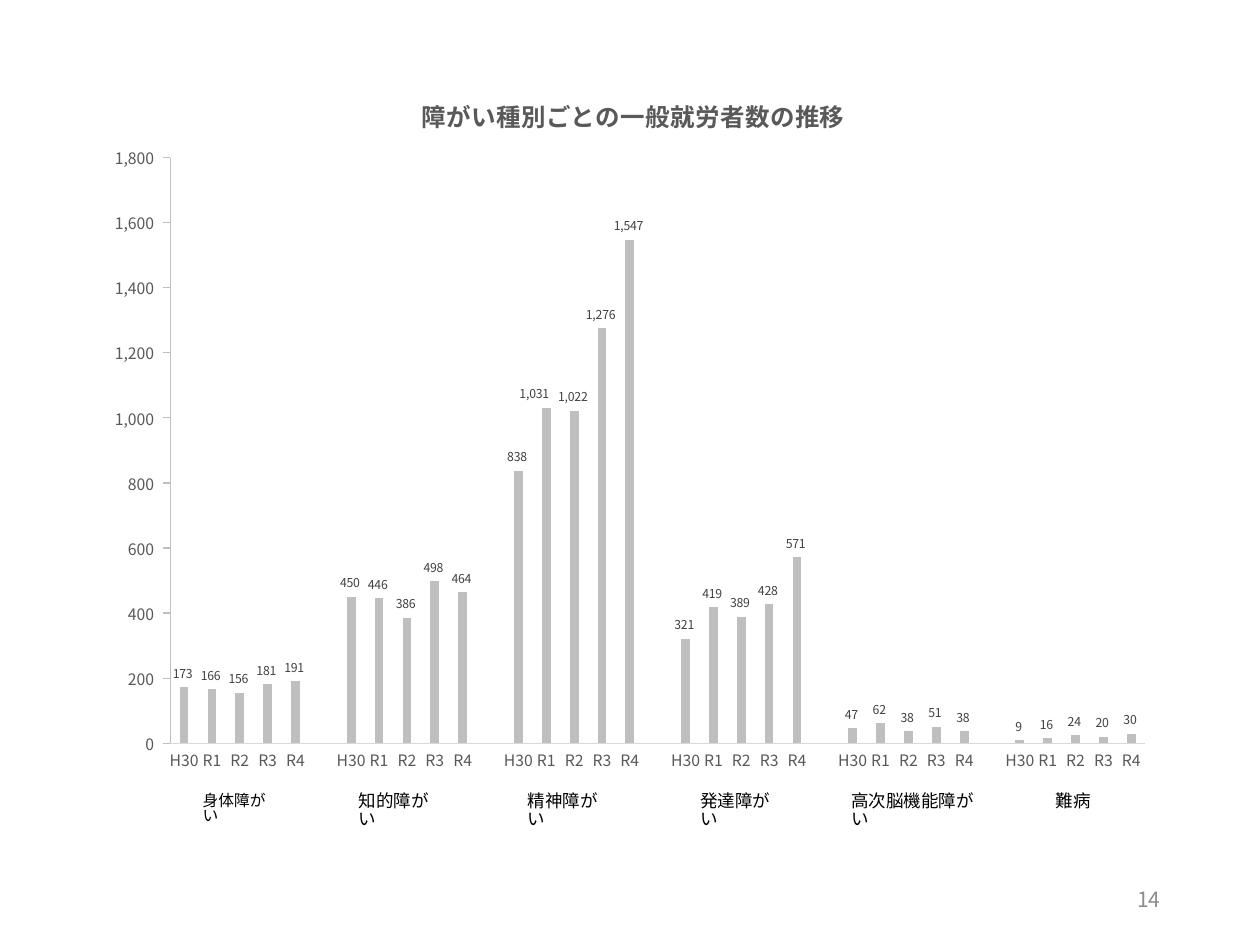
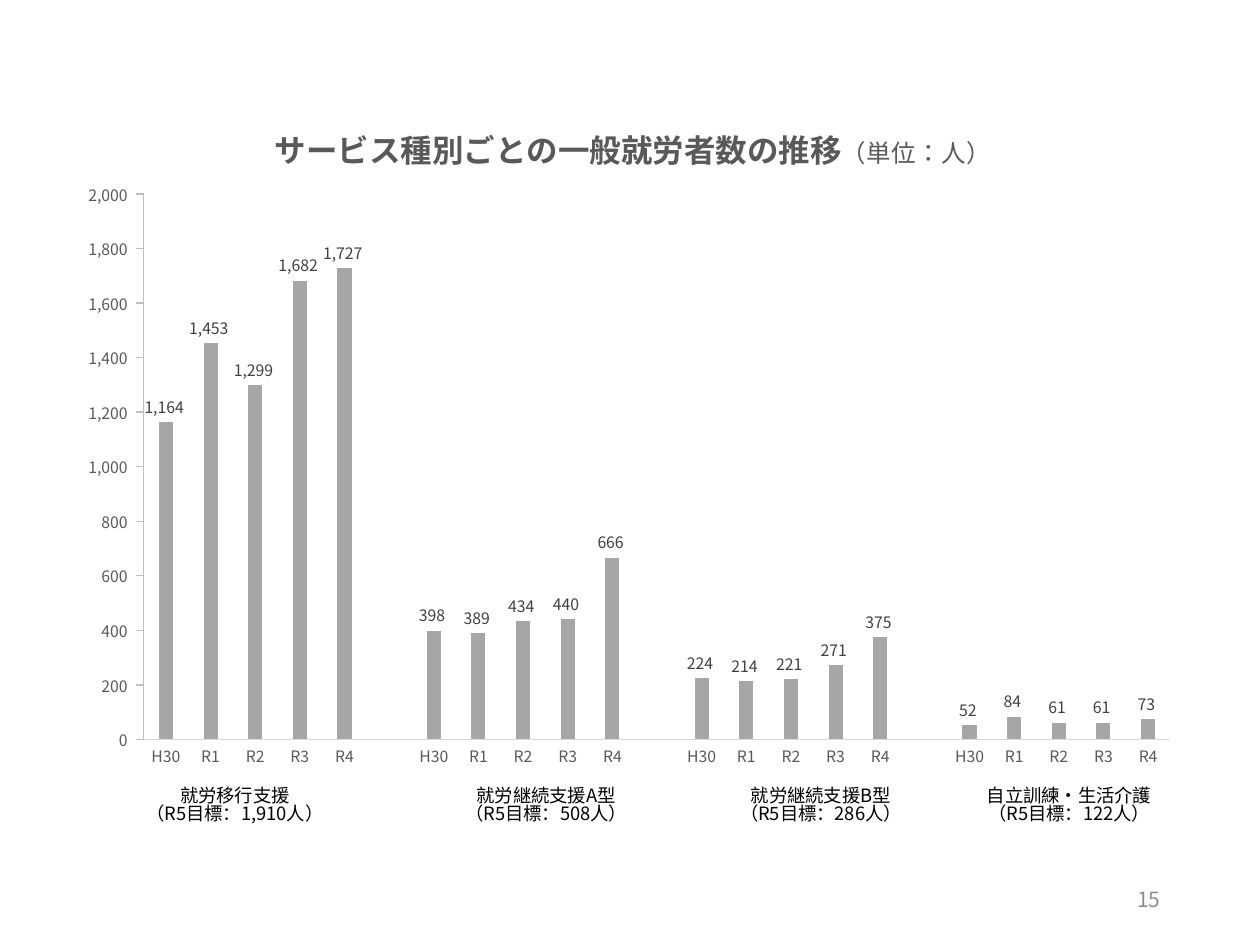
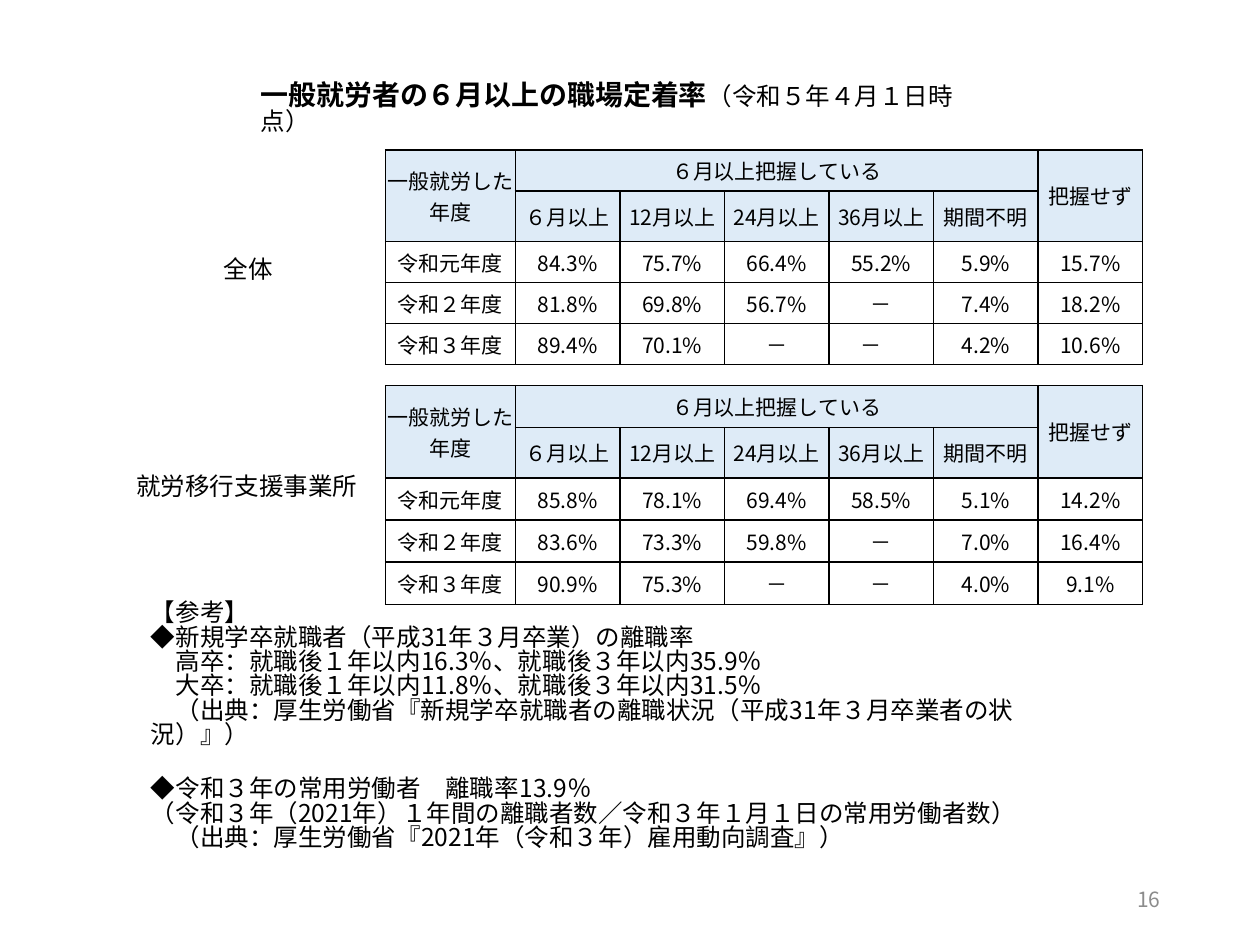
"""Build three slides on job placements: two column charts and two retention tables."""
import dataclasses

import lxml.etree
import pptx
import pptx.chart.data
import pptx.dml.color
import pptx.enum.chart
import pptx.enum.text
import pptx.oxml.ns
import pptx.util

QN = pptx.oxml.ns.qn
ALIGN = pptx.enum.text.PP_ALIGN
MID = pptx.enum.text.MSO_ANCHOR.MIDDLE
SCALE = 9144
YEARS = ["H30", "R1", "R2", "R3", "R4"]


@dataclasses.dataclass(frozen=True)
class Theme:
    """Colours, type sizes and spacing shared by the slides."""
    font: str = "Noto Sans CJK JP"
    ink: str = "000000"
    gray: str = "595959"
    value: str = "404040"
    page: str = "8C8C8C"
    base: str = "D9D9D9"
    axis: str = "BFBFBF"
    light: str = "BFBFBF"
    dark: str = "A6A6A6"
    head: str = "DEEBF7"
    tick: float = 9
    cell: float = 12
    body: float = 14
    lead: float = 16
    big: float = 18
    pitch: float = 0.83
    form: str = "#,##0_);[Red]\\(#,##0\\)"


T = Theme()


def emu(px):
    """Turn px into EMU."""
    return pptx.util.Emu(px * SCALE)


def tint(code):
    """Turn a hex code into a colour."""
    return pptx.dml.color.RGBColor.from_string(code)


def style(font, size, color=T.ink, bold=False):
    """Set the face, size, colour and weight of a font."""
    font.name = T.font
    font.size = pptx.util.Pt(size)
    font.color.rgb = tint(color)
    font.bold = bold


def write(para, runs, align=None):
    """Add runs of (text, size, colour, bold) to a paragraph."""
    para.alignment = align
    for text, *look in runs:
        run = para.add_run()
        run.text = text
        style(run.font, *look)


def fill_text(frame, lines, align=None, pitch=None):
    """Write each list of runs as a paragraph and return the paragraphs."""
    paras = [frame.paragraphs[0]] + [frame.add_paragraph() for _ in lines[1:]]
    for para, runs in zip(paras, lines):
        write(para, runs, align)
        para.line_spacing = pitch
    return paras


def add_text(slide, box, lines, align=None, anchor=None):
    """Add a wrapping text box and return its paragraphs."""
    frame = slide.shapes.add_textbox(*map(emu, box)).text_frame
    frame.word_wrap = True
    frame.vertical_anchor = anchor
    return fill_text(frame, lines, align, T.pitch)


def add_page(slide, number):
    """Add the page number at the lower right."""
    add_text(slide, (706, 695, 225, 40), [[(str(number), T.cell, T.page)]], ALIGN.RIGHT, MID)


def set_layout(parent, index, **parts):
    """Give a chart part a manual layout."""
    for old in parent.findall(QN("c:layout")):
        parent.remove(old)
    layout = lxml.etree.Element(QN("c:layout"))
    manual = lxml.etree.SubElement(layout, QN("c:manualLayout"))
    for name, val in parts.items():
        lxml.etree.SubElement(manual, QN("c:" + name)).set("val", str(val))
    parent.insert(index, layout)


def part_of(box, spot):
    """Return a spot as fractions of the box."""
    left, top, wide, high = box
    ratios = [(spot[0] - left) / wide, (spot[1] - top) / high]
    ratios += [size / whole for size, whole in zip(spot[2:], (wide, high))]
    return dict(zip("xywh", (round(r, 4) for r in ratios)))


def add_axes(chart, top):
    """Style both axes, with values up to top."""
    marks = pptx.enum.chart.XL_TICK_MARK
    for axis, color, mark in ((chart.category_axis, T.base, marks.NONE),
                              (chart.value_axis, T.axis, marks.OUTSIDE)):
        axis.has_major_gridlines = False
        axis.major_tick_mark = mark
        axis.minor_tick_mark = marks.NONE
        axis.format.line.color.rgb = tint(color)
        axis.format.line.width = pptx.util.Pt(0.75)
        style(axis.tick_labels.font, T.tick, T.gray)
    axis.minimum_scale = 0
    axis.maximum_scale = top
    axis.major_unit = 200
    axis.tick_labels.number_format = T.form
    axis.tick_labels.number_format_is_linked = False


def add_bars(slide, box, groups, title, spot, plot, top, color, size):
    """Add a titled column chart of year groups and return it."""
    data = pptx.chart.data.CategoryChartData(number_format=T.form)
    data.categories = (YEARS + [""]) * (len(groups) - 1) + YEARS
    vals = [val for group in groups for val in (*group, None)][:-1]
    data.add_series("Series 1", vals)
    kind = pptx.enum.chart.XL_CHART_TYPE.COLUMN_CLUSTERED
    chart = slide.shapes.add_chart(kind, *map(emu, box), data).chart
    style(chart.font, 10)
    chart.has_legend = False
    chart.has_title = True
    write(chart.chart_title.text_frame.paragraphs[0], title)
    set_layout(chart.element.find(".//" + QN("c:title")), 1,
               xMode="edge", yMode="edge", **part_of(box, spot))
    set_layout(chart.element.find(".//" + QN("c:plotArea")), 0, layoutTarget="inner",
               xMode="edge", yMode="edge", **part_of(box, plot))
    add_axes(chart, top)
    bars = chart.plots[0]
    bars.vary_by_categories = False
    bars.gap_width = 219
    bars.overlap = -27
    series = bars.series[0]
    series.format.fill.solid()
    series.format.fill.fore_color.rgb = tint(color)
    labels = series.data_labels
    labels.show_value = True
    labels.position = pptx.enum.chart.XL_LABEL_POSITION.OUTSIDE_END
    labels.number_format = T.form
    labels.number_format_is_linked = False
    style(labels.font, size, T.value)
    return chart


def nudge(chart, index, shift, size):
    """Move one value label sideways by a share of the chart width."""
    label = chart.plots[0].series[0].points[index].data_label
    label.position = pptx.enum.chart.XL_LABEL_POSITION.OUTSIDE_END
    style(label.font, size, T.value)
    set_layout(chart.element.find(".//" + QN("c:dLbl")), 1, x=shift, y=0)


def kinds_slide(slide):
    """Show placements by kind of disability."""
    groups = [(173, 166, 156, 181, 191), (450, 446, 386, 498, 464),
              (838, 1031, 1022, 1276, 1547), (321, 419, 389, 428, 571),
              (47, 62, 38, 51, 38), (9, 16, 24, 20, 30)]
    names = [("身体障がい", 151, 79, 9), ("知的障がい", 275, 85, 10),
             ("精神障がい", 409, 85, 10), ("発達障がい", 546, 85, 10),
             ("高次脳機能障がい", 666, 127, 10), ("難病", 828, 48, 10)]
    for name, left, wide, size in names:
        add_text(slide, (left, 625, wide, 27), [[(name, size)]])
    title = [("障がい種別ごとの一般就労者数の推移", T.body, T.gray, True)]
    chart = add_bars(slide, (74, 49, 851, 575), groups, title, (331, 72),
                     (135, 125, 774, 465), 1800, T.light, 7)
    nudge(chart, 13, -0.01, 7)


def service_slide(slide):
    """Show placements by kind of service."""
    groups = [(1164, 1453, 1299, 1682, 1727), (398, 389, 434, 440, 666),
              (224, 214, 221, 271, 375), (52, 84, 61, 61, 73)]
    names = [("就労移行支援", "1,910", 102, 169), ("就労継続支援A型", "508", 351, 165),
             ("就労継続支援B型", "286", 569, 165), ("自立訓練・生活介護", "122", 766, 165)]
    for name, goal, left, wide in names:
        lines = [[(name, 10.5)], [(f"（R5目標：{goal}人）", 10.5)]]
        add_text(slide, (left, 620, wide, 45), lines, ALIGN.CENTER)
    title = [("サービス種別ごとの一般就労者数の推移", T.big, T.gray, True),
             ("（単位：人）", T.body, T.gray)]
    add_bars(slide, (53, 72, 894, 548), groups, title, (215, 95),
             (114, 154, 815, 433), 2000, T.dark, T.tick)


def edge(cell):
    """Draw a one-point line on each side of a cell."""
    props = cell._tc.get_or_add_tcPr()
    for index, side in enumerate("LRTB"):
        line = lxml.etree.Element(QN("a:ln" + side), w="12700")
        paint = lxml.etree.SubElement(line, QN("a:solidFill"))
        lxml.etree.SubElement(paint, QN("a:srgbClr"), val=T.ink)
        props.insert(index, line)


def add_rates(slide, box, rates):
    """Add a table of retention rates by year."""
    heads = [["一般就労した\n年度", "６月以上把握している", "", "", "", "", "把握せず"],
             ["", "６月以上", "12月以上", "24月以上", "36月以上", "期間不明", ""]]
    years = ["令和元年度", "令和２年度", "令和３年度"]
    rows = heads + [[year, *rate] for year, rate in zip(years, rates)]
    table = slide.shapes.add_table(len(rows), len(rows[0]), *map(emu, box)).table
    table.first_row = table.horz_banding = False
    for index, col in enumerate(table.columns):
        col.width = emu(83 if index else 103)
    for y, row in enumerate(rows):
        for x, text in enumerate(row):
            cell = table.cell(y, x)
            cell.margin_left = cell.margin_right = cell.margin_top = cell.margin_bottom = 0
            cell.vertical_anchor = MID
            if y < len(heads):
                cell.fill.solid()
                cell.fill.fore_color.rgb = tint(T.head)
            else:
                cell.fill.background()
            edge(cell)
            if text:
                lines = [[(line, T.cell)] for line in text.split("\n")]
                fill_text(cell.text_frame, lines, ALIGN.CENTER)
    for start, end in (((0, 0), (1, 0)), ((0, 1), (0, 5)), ((0, 6), (1, 6))):
        table.cell(*start).merge(table.cell(*end))


def rates_slide(slide):
    """Show job retention with notes for reference."""
    add_text(slide, (197, 61, 607, 37),
             [[("一般就労者の６月以上の職場定着率", T.lead, T.ink, True),
               ("（令和５年４月１日時点）", T.body)]])
    notes = ["【参考】",
             "◆新規学卒就職者（平成31年３月卒業）の離職率",
             "　高卒：就職後１年以内16.3％、就職後３年以内35.9％",
             "　大卒：就職後１年以内11.8％、就職後３年以内31.5％",
             "　（出典：厚生労働省『新規学卒就職者の離職状況（平成31年３月卒業者の状況）』）",
             "◆令和３年の常用労働者　離職率13.9％",
             "（令和３年（2021年）１年間の離職者数／令和３年１月１日の常用労働者数）",
             "　（出典：厚生労働省『2021年（令和３年）雇用動向調査』）"]
    paras = add_text(slide, (110, 473, 780, 222), [[(note, T.body)] for note in notes])
    paras[5].space_before = pptx.util.Pt(17)
    add_rates(slide, (306, 119, 601, 163),
              [("84.3%", "75.7%", "66.4%", "55.2%", "5.9%", "15.7%"),
               ("81.8%", "69.8%", "56.7%", "－", "7.4%", "18.2%"),
               ("89.4%", "70.1%", "－", "－　", "4.2%", "10.6%")])
    add_rates(slide, (306, 306, 601, 167),
              [("85.8%", "78.1%", "69.4%", "58.5%", "5.1%", "14.2%"),
               ("83.6%", "73.3%", "59.8%", "－", "7.0%", "16.4%"),
               ("90.9%", "75.3%", "－", "－", "4.0%", "9.1%")])
    for name, box in (("全体", (139, 201, 116, 34)),
                      ("就労移行支援事業所", (98, 373, 196, 34))):
        add_text(slide, box, [[(name, T.body)]], ALIGN.CENTER)


def set_asian(slide):
    """Use the theme face for East Asian text too."""
    roots = [slide.element]
    roots += [shape.chart.element for shape in slide.shapes if shape.has_chart]
    for root in roots:
        for latin in list(root.iter(QN("a:latin"))):
            latin.addnext(lxml.etree.Element(QN("a:ea"), typeface=T.font))


def main():
    """Build and save the deck."""
    deck = pptx.Presentation()
    deck.slide_width, deck.slide_height = emu(1000), emu(750)
    for number, build in enumerate((kinds_slide, service_slide, rates_slide), 14):
        slide = deck.slides.add_slide(deck.slide_layouts[6])
        add_page(slide, number)
        build(slide)
        set_asian(slide)
    deck.save("out.pptx")


if __name__ == "__main__":
    main()
